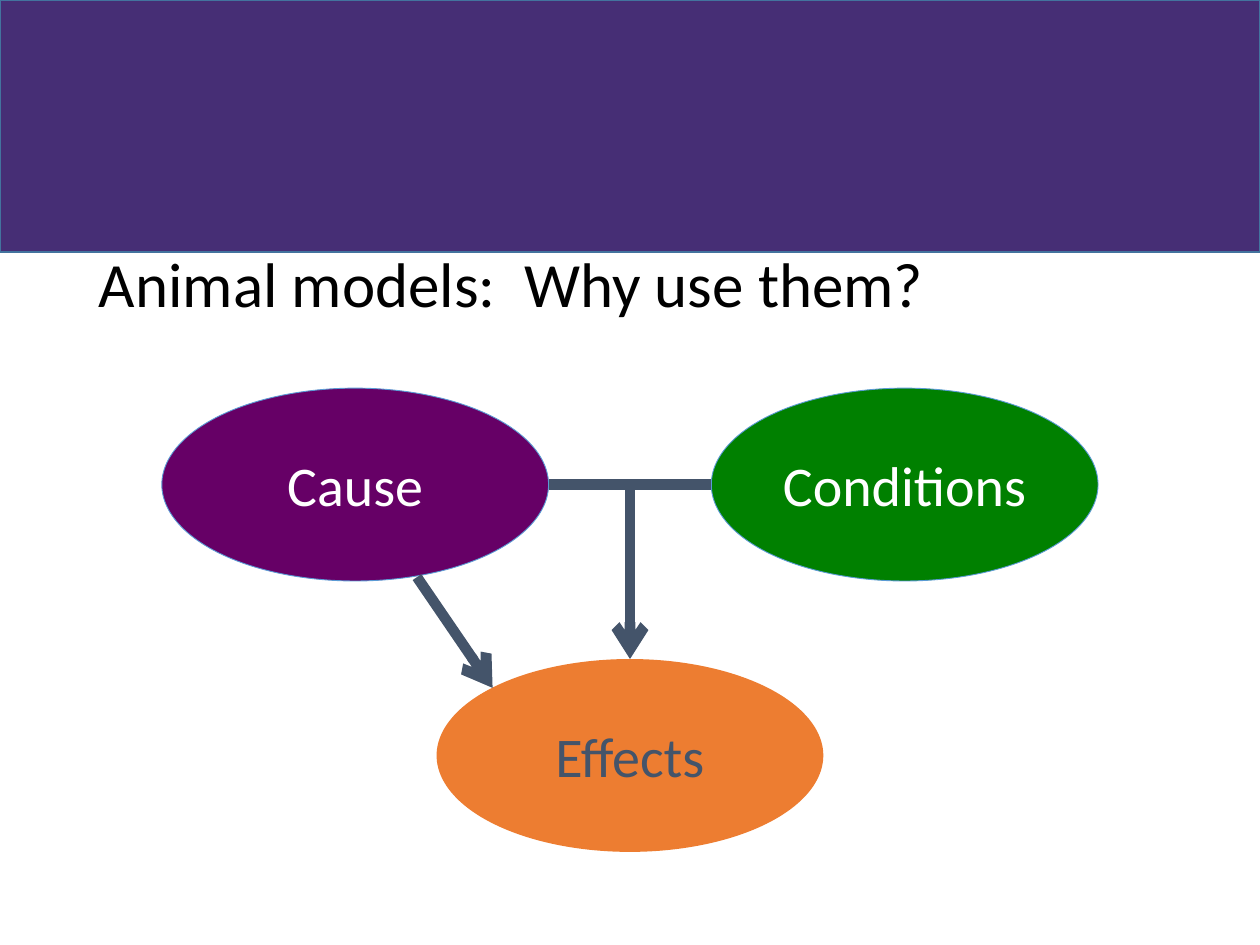
from pptx import Presentation
from pptx.dml.color import RGBColor
from pptx.enum.shapes import MSO_CONNECTOR, MSO_SHAPE
from pptx.enum.text import MSO_ANCHOR, PP_ALIGN
from pptx.oxml.ns import qn
from pptx.util import Pt
from lxml.etree import SubElement

WHITE = RGBColor(0xFF, 0xFF, 0xFF)
BLACK = RGBColor(0, 0, 0)
INDIGO = RGBColor(0x46, 0x2E, 0x75)
BAND_EDGE = RGBColor(0x43, 0x73, 0x9E)
PURPLE = RGBColor(0x66, 0x00, 0x66)
GREEN = RGBColor(0x00, 0x80, 0x00)
ORANGE = RGBColor(0xED, 0x7D, 0x31)
BLUE = RGBColor(0x5B, 0x9B, 0xD5)
SLATE = RGBColor(0x44, 0x54, 0x6A)

WIDTH, HEIGHT = 720, 540
MID = WIDTH / 2
OVAL_W, OVAL_H = 221, 110.2
OFFSET = 157
TOP_ROW, BOTTOM_ROW = 221.8, 376.6
JOIN_Y = TOP_ROW + OVAL_H / 2
INNER = OFFSET - OVAL_W / 2

TITLE = "Animal models:  Why use them?"
OVALS = [
    ("Cause", MID - OFFSET, TOP_ROW, PURPLE, BLUE, WHITE),
    ("Conditions", MID + OFFSET, TOP_ROW, GREEN, BLUE, WHITE),
    ("Effects", MID, BOTTOM_ROW, ORANGE, None, SLATE),
]


def add_text(sp, text, size, color, align=PP_ALIGN.LEFT, spacing=1.0):
    tf = sp.text_frame
    tf.word_wrap = True
    tf.vertical_anchor = MSO_ANCHOR.MIDDLE
    p = tf.paragraphs[0]
    p.alignment = align
    p.line_spacing = spacing
    r = p.add_run()
    r.text = text
    r.font.name = "Calibri"
    r.font.size = Pt(size)
    r.font.color.rgb = color


def add_filled(s, kind, box, fill, line=None, weight=1):
    sp = s.shapes.add_shape(kind, *map(Pt, box))
    sp.shadow.inherit = False
    sp.fill.solid()
    sp.fill.fore_color.rgb = fill
    if line is None:
        sp.line.fill.background()
    else:
        sp.line.color.rgb = line
        sp.line.width = Pt(weight)
    return sp


def add_line(s, start, end, arrow=False):
    c = s.shapes.add_connector(MSO_CONNECTOR.STRAIGHT, *map(Pt, start + end))
    c.line.color.rgb = SLATE
    c.line.width = Pt(6)
    if arrow:
        SubElement(c.line._get_or_add_ln(), qn("a:tailEnd"), type="arrow")
    SubElement(c._element.spPr, qn("a:effectLst"))
    return c


def main():
    prs = Presentation()
    prs.slide_width, prs.slide_height = Pt(WIDTH), Pt(HEIGHT)
    s = prs.slides.add_slide(prs.slide_layouts[6])

    add_filled(s, MSO_SHAPE.RECTANGLE, (0, 0, WIDTH, 144), INDIGO, BAND_EDGE)
    title = s.shapes.add_textbox(Pt(49.5), Pt(111.6), Pt(621), Pt(104.4))
    add_text(title, TITLE, 36, BLACK, spacing=0.9)

    ovals = {}
    for name, center, top, fill, line, color in OVALS:
        box = (center - OVAL_W / 2, top, OVAL_W, OVAL_H)
        sp = add_filled(s, MSO_SHAPE.OVAL, box, fill, line, 0.5)
        add_text(sp, name, 32, color, align=PP_ALIGN.CENTER)
        ovals[name] = sp

    add_line(s, (238.3, 329.8), (281.5, 393.1), arrow=True)
    add_line(s, (MID - INNER, JOIN_Y), (MID + INNER, JOIN_Y))
    stem = add_line(s, (MID, JOIN_Y), (MID, BOTTOM_ROW), arrow=True)
    stem.end_connect(ovals["Effects"], 0)

    prs.save("out.pptx")


if __name__ == "__main__":
    main()
